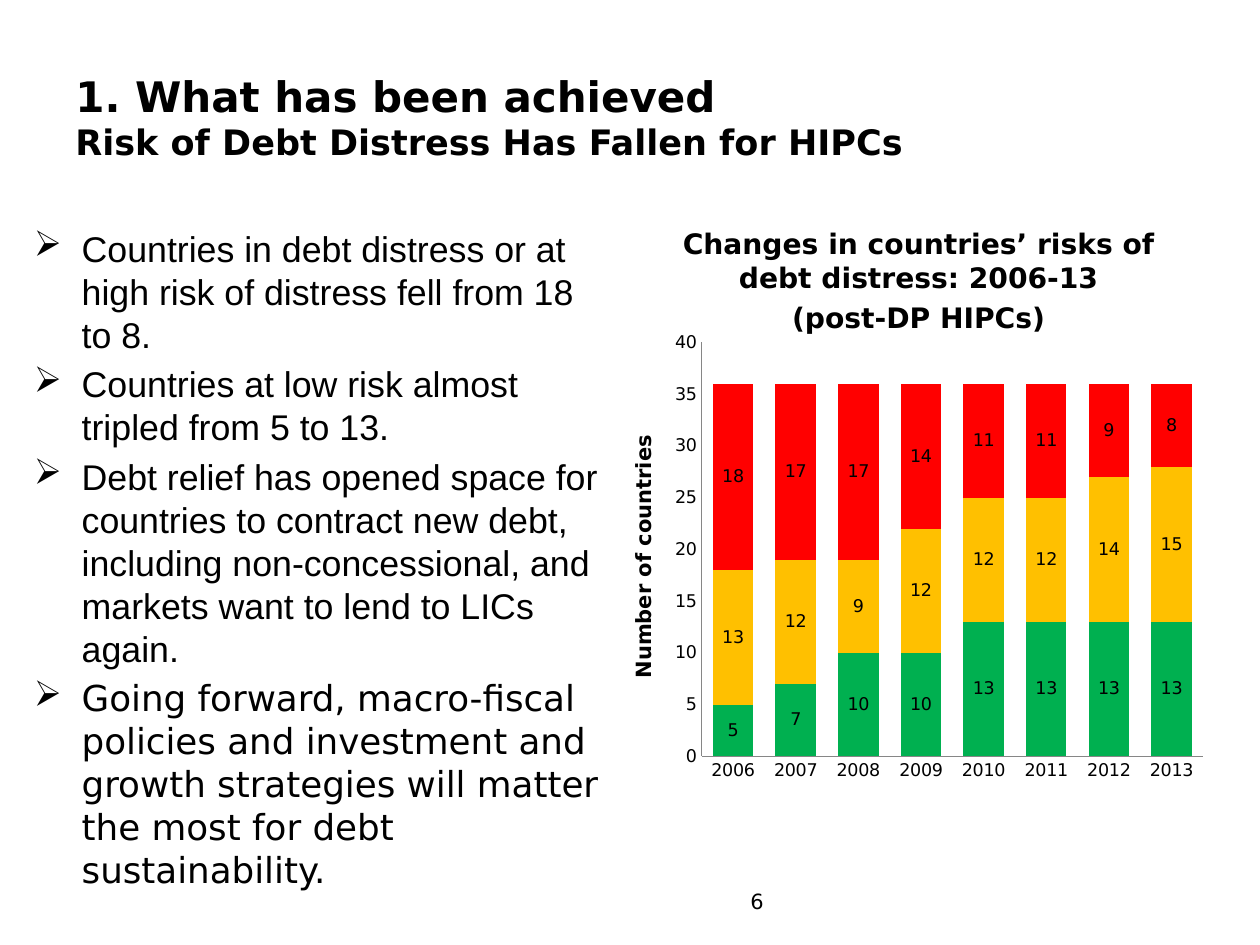
from lxml.etree import SubElement
from pptx import Presentation
from pptx.chart.data import CategoryChartData
from pptx.dml.color import RGBColor
from pptx.enum.chart import XL_CHART_TYPE as ChartType, XL_TICK_MARK as TickMark
from pptx.enum.text import MSO_ANCHOR as Anchor, PP_ALIGN as Align
from pptx.oxml import parse_xml
from pptx.oxml.ns import nsdecls, qn
from pptx.util import Inches, Pt

BLACK = RGBColor(0, 0, 0)
GRAY = RGBColor(0x86, 0x86, 0x86)
GREEN = RGBColor(0x00, 0xB0, 0x50)
AMBER = RGBColor(0xFF, 0xC0, 0x00)
RED = RGBColor(0xFF, 0x00, 0x00)
SANS = "DejaVu Sans"
BODY = "Arial"

BULLETS = [
    ("Countries in debt distress or at high risk of distress fell from 18 to 8.", BODY),
    ("Countries at low risk almost tripled from 5 to 13.", BODY),
    ("Debt relief has opened space for countries to contract new debt, including "
     "non-concessional, and markets want to lend to LICs again.", BODY),
    ("Going forward, macro-fiscal policies and investment and growth strategies "
     "will matter the most for debt sustainability.", SANS),
]
CHART_HEADING = ["Changes in countries’ risks of debt distress: 2006-13", "(post-DP HIPCs)"]
YEARS = [str(year) for year in range(2006, 2014)]
RISK_LEVELS = [
    ("Series 1", (5, 7, 10, 10, 13, 13, 13, 13), GREEN),
    ("Series 2", (13, 12, 9, 12, 12, 12, 14, 15), AMBER),
    ("Series 3", (18, 17, 17, 14, 11, 11, 9, 8), RED),
]
PLOT_AREA = {"x": 0.131, "y": 0.07, "w": 0.802, "h": 0.773}


def set_font(font, size, name=SANS, bold=False):
    """Apply size, typeface and weight in black."""
    font.size, font.name, font.bold = Pt(size), name, bold
    font.color.rgb = BLACK


def add_text_frame(page, left, top, width, height, anchor=Anchor.TOP):
    """Add a wrapping text box and return its frame."""
    box = page.shapes.add_textbox(Inches(left), Inches(top), Inches(width), Inches(height))
    frame = box.text_frame
    frame.word_wrap = True
    frame.vertical_anchor = anchor
    return frame


def add_paragraph(frame, text, line_height, gap):
    """Add a paragraph, with space before all but the first."""
    first = not frame.text
    para = frame.paragraphs[0] if first else frame.add_paragraph()
    para.text = text
    para.line_spacing = Pt(line_height)
    if not first:
        para.space_before = Pt(gap)
    return para


def add_bullet(para):
    """Give a paragraph a hanging arrow bullet."""
    properties = para._p.get_or_add_pPr()
    properties.set("marL", str(Inches(0.38)))
    properties.set("indent", str(-Inches(0.38)))
    SubElement(properties, qn("a:buChar"), char="➢")


def add_title(page):
    """Add the two-line slide title."""
    para = add_text_frame(page, 0.5, 0.3, 9, 1.25, Anchor.MIDDLE).paragraphs[0]
    heading = para.add_run()
    heading.text = "1. What has been achieved"
    set_font(heading.font, 24, bold=True)
    para.add_line_break()
    subheading = para.add_run()
    subheading.text = "Risk of Debt Distress Has Fallen for HIPCs"
    set_font(subheading.font, 20, bold=True)


def add_bullets(page):
    """Add the bulleted findings."""
    frame = add_text_frame(page, 0.17, 1.75, 4.75, 4.95)
    for text, name in BULLETS:
        para = add_paragraph(frame, text, 24.5, 4)
        add_bullet(para)
        set_font(para.font, 20.4, name)


def add_chart_heading(page):
    """Add the centred heading above the chart."""
    frame = add_text_frame(page, 5.08, 1.75, 4.42, 4.95)
    for text in CHART_HEADING:
        para = add_paragraph(frame, text, 19.4, 3)
        para.alignment = Align.CENTER
        set_font(para.font, 16.1, bold=True)


def add_page_number(page):
    """Add the right-aligned page number."""
    para = add_text_frame(page, 3.83, 6.95, 2.33, 0.4, Anchor.MIDDLE).paragraphs[0]
    para.text = "6"
    para.alignment = Align.RIGHT
    set_font(para.font, 12)


def place_plot(chart):
    """Fix the inner plot area within the chart."""
    modes = "".join(f'<c:{side}Mode val="edge"/>' for side in "xy")
    sizes = "".join(f'<c:{key} val="{value}"/>' for key, value in PLOT_AREA.items())
    plot_area = chart._chartSpace.chart.plotArea
    for layout in plot_area.findall(qn("c:layout")):
        plot_area.remove(layout)
    plot_area.insert(0, parse_xml(
        f'<c:layout {nsdecls("c")}><c:manualLayout><c:layoutTarget val="inner"/>'
        f'{modes}{sizes}</c:manualLayout></c:layout>'))


def style_axes(chart):
    """Style both axes and title the value axis."""
    for axis in (chart.category_axis, chart.value_axis):
        axis.has_major_gridlines = False
        axis.major_tick_mark = axis.minor_tick_mark = TickMark.NONE
        axis.format.line.color.rgb = GRAY
        axis.format.line.width = Pt(0.75)
    values = chart.value_axis
    values.minimum_scale, values.maximum_scale, values.major_unit = 0, 40, 5
    para = values.axis_title.text_frame.paragraphs[0]
    para.text = "Number of countries"
    set_font(para.font, 12, bold=True)


def add_risk_chart(page):
    """Add the stacked columns of countries by risk level."""
    data = CategoryChartData()
    data.categories = YEARS
    for name, values, _ in RISK_LEVELS:
        data.add_series(name, values)
    chart = page.shapes.add_chart(
        ChartType.COLUMN_STACKED, Inches(4.92), Inches(2.42), Inches(4.96), Inches(4.25), data
    ).chart
    chart.has_title = chart.has_legend = False
    set_font(chart.font, 10)
    plot = chart.plots[0]
    plot.gap_width, plot.overlap, plot.vary_by_categories = 55, 100, False
    for series, (_, _, color) in zip(plot.series, RISK_LEVELS):
        series.format.fill.solid()
        series.format.fill.fore_color.rgb = color
        series.data_labels.show_value = True
    style_axes(chart)
    place_plot(chart)


def main():
    """Build and save the slide."""
    deck = Presentation()
    deck.slide_width, deck.slide_height = Inches(10), Inches(7.5)
    page = deck.slides.add_slide(deck.slide_layouts[6])
    add_title(page)
    add_bullets(page)
    add_chart_heading(page)
    add_page_number(page)
    add_risk_chart(page)
    deck.save("out.pptx")


if __name__ == "__main__":
    main()
